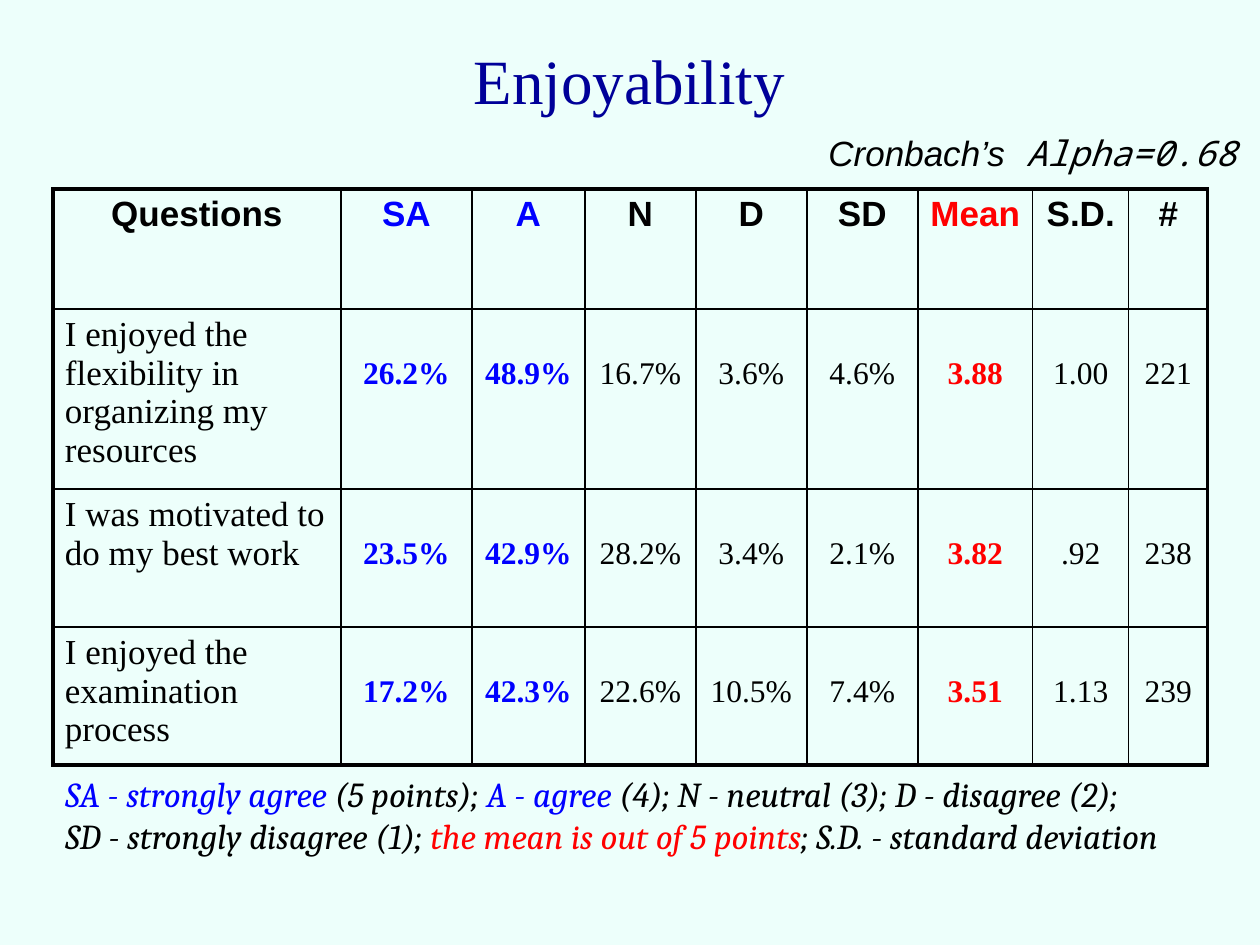
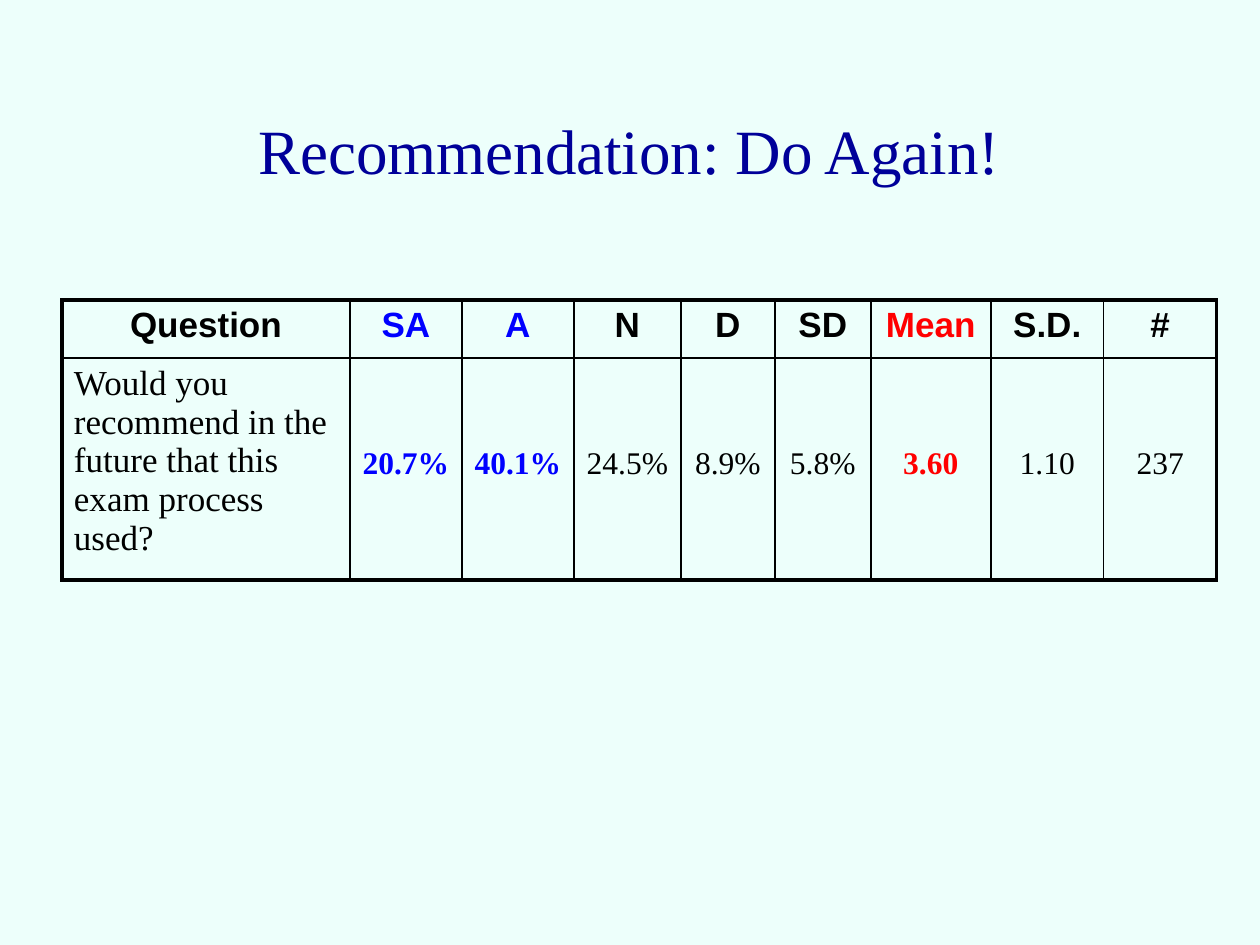
from lxml.etree import SubElement
from pptx import Presentation
from pptx.dml.color import RGBColor
from pptx.enum.text import MSO_ANCHOR, PP_ALIGN
from pptx.oxml.ns import qn
from pptx.util import Emu, Pt

EMU_PER_PX = 914400 / 126

BACKGROUND = RGBColor(0xED, 0xFF, 0xFB)
NAVY = RGBColor(0x00, 0x00, 0x99)
BLUE = RGBColor(0x00, 0x00, 0xFF)
RED = RGBColor(0xFF, 0x00, 0x00)
BLACK = RGBColor(0x00, 0x00, 0x00)

SERIF, SANS = "Times New Roman", "Arial"
SCORE_HEADINGS = ["SA", "A", "N", "D", "SD", "Mean", "S.D.", "#"]
HIGHLIGHTS = {"SA": BLUE, "A": BLUE, "Mean": RED}
THIN, THICK = 1, 2.25
CELL_MARGIN_X, CELL_MARGIN_Y = 12, 6


def px(n):
    return Emu(round(n * EMU_PER_PX))


def set_font(target, size, name=None, color=None, bold=False, italic=False):
    font = target.font
    font.size, font.bold, font.italic = Pt(size), bold, italic
    if name:
        font.name = name
    if color is not None:
        font.color.rgb = color


def add_slide(prs):
    s = prs.slides.add_slide(prs.slide_layouts[6])
    s.background.fill.solid()
    s.background.fill.fore_color.rgb = BACKGROUND
    return s


def add_text_box(s, left, top, width, height, wrap=True):
    tf = s.shapes.add_textbox(px(left), px(top), px(width), px(height)).text_frame
    tf.word_wrap = wrap
    return tf


def add_title(s, text, top, height):
    tf = add_text_box(s, 94, top, 1071, height)
    tf.vertical_anchor = MSO_ANCHOR.MIDDLE
    p = tf.paragraphs[0]
    p.text = text
    p.alignment = PP_ALIGN.CENTER
    set_font(p, 36, SERIF, NAVY)


def add_reliability(s):
    tf = add_text_box(s, 816, 125, 441, 55, wrap=False)
    p = tf.paragraphs[0]
    set_font(p, 20, color=BLACK, italic=True)
    for text, name in [("Cronbach’s", SANS), (" Alpha=0.68", "Noto Sans Mono")]:
        r = p.add_run()
        r.text = text
        r.font.name = name


def add_legend(s):
    p = add_text_box(s, 53, 766, 1176, 97).paragraphs[0]
    set_font(p, 20, "Cambria", italic=True)
    lines = [
        [("SA - strongly agree", BLUE), (" (5 points); ", BLACK), ("A - agree", BLUE),
         (" (4); N - neutral (3); D - disagree (2);", BLACK)],
        [("SD - strongly disagree (1); ", BLACK), ("the mean is out of 5 points", RED),
         ("; S.D. - standard deviation", BLACK)],
    ]
    for i, line in enumerate(lines):
        if i:
            p.add_line_break()
        for text, color in line:
            r = p.add_run()
            r.text = text
            r.font.color.rgb = color


def set_borders(cell, outer_sides):
    """Draw thick lines on the outer sides of the table and thin ones elsewhere."""
    tcPr = cell._tc.get_or_add_tcPr()
    for side in "LRTB":
        width = THICK if side in outer_sides else THIN
        ln = SubElement(tcPr, qn(f"a:ln{side}"), w=str(Pt(width)))
        fill = SubElement(ln, qn("a:solidFill"))
        SubElement(fill, qn("a:srgbClr"), val=str(BLACK))


def fill_cell(cell, text, heading, is_header, score_offset):
    is_question = heading not in SCORE_HEADINGS
    is_score = not (is_header or is_question)
    cell.margin_left = cell.margin_right = px(CELL_MARGIN_X)
    cell.margin_top = px(score_offset if is_score else CELL_MARGIN_Y)
    cell.margin_bottom = px(CELL_MARGIN_Y)
    p = cell.text_frame.paragraphs[0]
    p.text = text
    p.alignment = PP_ALIGN.CENTER if is_header or is_score else PP_ALIGN.LEFT
    set_font(p, 18 if is_score else 20, SANS if is_header else SERIF,
             HIGHLIGHTS.get(heading, BLACK), bold=is_header or heading in HIGHLIGHTS)


def add_survey_table(s, left, top, widths, heights, rows, score_offset):
    """Place a header and its answers; scores start score_offset below the row top."""
    frame = s.shapes.add_table(len(rows), len(widths), px(left), px(top),
                               px(sum(widths)), px(sum(heights)))
    table = frame.table
    table.first_row = table.horz_banding = False
    for column, width in zip(table.columns, widths):
        column.width = px(width)
    for row, height in zip(table.rows, heights):
        row.height = px(height)
    last_row, last_col = len(rows) - 1, len(widths) - 1
    for i, row in enumerate(rows):
        for j, text in enumerate(row):
            cell = table.cell(i, j)
            outer = {"T": i == 0, "B": i == last_row, "L": j == 0, "R": j == last_col}
            set_borders(cell, [side for side, is_outer in outer.items() if is_outer])
            cell.fill.background()
            fill_cell(cell, text, rows[0][j], i == 0, score_offset)


def build_enjoyability(prs):
    s = add_slide(prs)
    add_title(s, "Enjoyability", 0, 158)
    rows = [
        ["Questions", *SCORE_HEADINGS],
        ["I enjoyed the flexibility in organizing my resources",
         "26.2%", "48.9%", "16.7%", "3.6%", "4.6%", "3.88", "1.00", "221"],
        ["I was motivated to do my best work",
         "23.5%", "42.9%", "28.2%", "3.4%", "2.1%", "3.82", ".92", "238"],
        ["I enjoyed the examination process",
         "17.2%", "42.3%", "22.6%", "10.5%", "7.4%", "3.51", "1.13", "239"],
    ]
    add_survey_table(s, 53, 189, [288, 131, 113, 111, 111, 111, 115, 96, 79],
                     [120, 168, 138, 130], rows, score_offset=47)
    add_legend(s)
    add_reliability(s)


def build_recommendation(prs):
    s = add_slide(prs)
    add_title(s, "Recommendation: Do Again!", 84, 130)
    rows = [
        ["Question", *SCORE_HEADINGS],
        ["Would you recommend in the future that this exam process used?",
         "20.7%", "40.1%", "24.5%", "8.9%", "5.8%", "3.60", "1.10", "237"],
    ]
    add_survey_table(s, 62, 300, [288, 112, 112, 107, 94, 96, 120, 113, 113],
                     [58, 214], rows, score_offset=88)


def main():
    prs = Presentation()
    prs.slide_width, prs.slide_height = px(1260), px(945)
    build_enjoyability(prs)
    build_recommendation(prs)
    prs.save("out.pptx")


if __name__ == "__main__":
    main()
